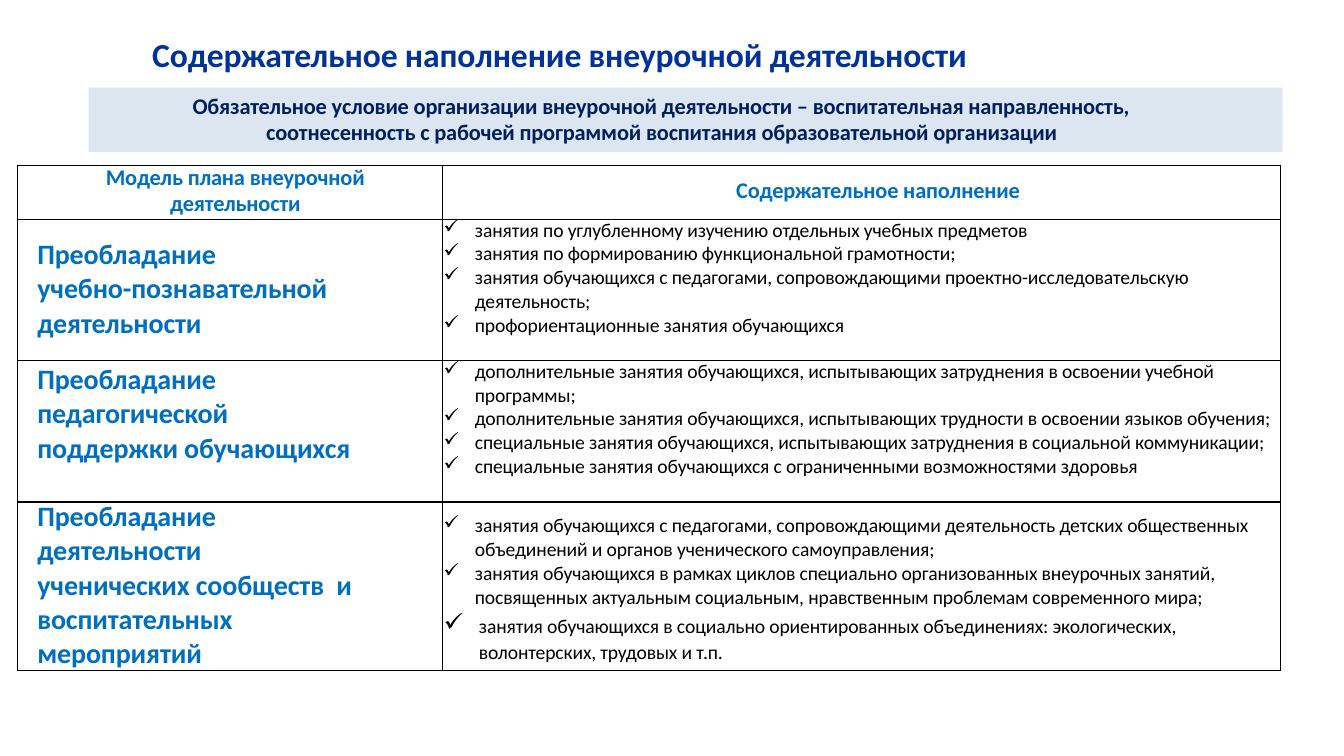
import pptx
import pptx.dml.color
import pptx.enum.shapes
import pptx.enum.text
import pptx.oxml
import pptx.oxml.ns
import pptx.util
import lxml.etree

RGBColor = pptx.dml.color.RGBColor
Pt = pptx.util.Pt
Align = pptx.enum.text.PP_ALIGN
qn = pptx.oxml.ns.qn

EMU_PER_PX = 9144
FONT = "Calibri"
TITLE_BLUE = RGBColor(0x00, 0x33, 0x99)
NAVY = RGBColor(0x00, 0x1F, 0x5F)
TABLE_BLUE = RGBColor(0x00, 0x6F, 0xC0)
PALE_BLUE = RGBColor(0xDC, 0xE6, 0xF1)
BLACK = RGBColor(0x00, 0x00, 0x00)

TITLE = "Содержательное наполнение внеурочной деятельности"
CONDITION = (
    "Обязательное условие организации внеурочной деятельности – воспитательная направленность, "
    "соотнесенность с рабочей программой воспитания образовательной организации"
)
HEADER_MODEL = ["Модель плана внеурочной", "деятельности"]
HEADER_CONTENT = ["Содержательное наполнение"]
MODELS = [
    ["Преобладание", "учебно-познавательной деятельности"],
    ["Преобладание", "педагогической", "поддержки обучающихся"],
    ["Преобладание", "деятельности", "ученических сообществ  и воспитательных мероприятий"],
]
CONTENTS = [
    [
        "занятия по углубленному изучению отдельных учебных предметов",
        "занятия по формированию функциональной грамотности;",
        "занятия обучающихся с педагогами, сопровождающими проектно-исследовательскую деятельность;",
        "профориентационные занятия обучающихся",
    ],
    [
        "дополнительные занятия обучающихся, испытывающих затруднения в освоении учебной",
        "программы;",
        "дополнительные занятия обучающихся, испытывающих трудности в освоении языков обучения;",
        "специальные занятия обучающихся, испытывающих затруднения в социальной коммуникации;",
        "специальные занятия обучающихся с ограниченными возможностями здоровья",
    ],
    [
        "занятия обучающихся с педагогами, сопровождающими деятельность детских общественных "
        "объединений и органов ученического самоуправления;",
        "занятия обучающихся в рамках циклов специально организованных внеурочных занятий,",
        "посвященных актуальным социальным, нравственным проблемам современного мира;",
        "занятия обучающихся в социально ориентированных объединениях: экологических, "
        "волонтерских, трудовых и т.п.",
    ],
]
CONTINUATIONS = ("программы;", "посвященных")
MODEL_TOPS = [18, 2, 0]
CONTENT_TOPS = [0, 0, 12]
MODEL_FIRST_LINES = [None, None, 22.9]
CONTENT_FIRST_LINES = [16.1, 16.1, None]
COLUMN_WIDTHS = [422, 831]
ROW_HEIGHTS = [54, 140, 140, 167]


def px(length):
    return pptx.util.Emu(length * EMU_PER_PX)


def set_indent(paragraph, left, first=0, right=0):
    properties = paragraph._p.get_or_add_pPr()
    for name, length in (("marL", left), ("marR", right), ("indent", first)):
        properties.set(name, str(px(length)))


def set_bullet(paragraph, percent=100):
    properties = paragraph._p.get_or_add_pPr()
    size = lxml.etree.SubElement(properties, qn("a:buSzPct"))
    size.set("val", str(percent * 1000))
    bullet = lxml.etree.SubElement(properties, qn("a:buChar"))
    bullet.set("char", "✓")


def format_runs(paragraph, size, color, bold=True):
    for run in paragraph.runs:
        run.font.name = FONT
        run.font.size = Pt(size)
        run.font.bold = bold
        run.font.color.rgb = color
        run._r.get_or_add_rPr().set("spc", "-10")


def set_margins(holder, top):
    holder.margin_left = holder.margin_right = holder.margin_bottom = 0
    holder.margin_top = px(top)


def write_cell(cell, lines, top, size, color, bold=True):
    set_margins(cell, top)
    cell.text_frame.text = "\n".join(lines)
    for paragraph in cell.text_frame.paragraphs:
        format_runs(paragraph, size, color, bold)
    return cell.text_frame.paragraphs


def set_borders(cell):
    cell.fill.background()
    properties = cell._tc.get_or_add_tcPr()
    for position, side in enumerate(("lnL", "lnR", "lnT", "lnB")):
        border = pptx.oxml.parse_xml(
            f'<a:{side} xmlns:a="http://schemas.openxmlformats.org/drawingml/2006/main" w="12700">'
            f'<a:solidFill><a:srgbClr val="{BLACK}"/></a:solidFill></a:{side}>'
        )
        properties.insert(position, border)


def add_title(slide, left, top, width, height):
    text_frame = slide.shapes.add_textbox(px(left), px(top), px(width), px(height)).text_frame
    text_frame.word_wrap = True
    set_margins(text_frame, 1)
    text_frame.text = TITLE
    paragraph = text_frame.paragraphs[0]
    paragraph.space_before = Pt(1)
    set_indent(paragraph, 1)
    format_runs(paragraph, 24, TITLE_BLUE)


def add_condition(slide, left, top, width, height):
    rectangle = pptx.enum.shapes.MSO_SHAPE.RECTANGLE
    shape = slide.shapes.add_shape(rectangle, px(left), px(top), px(width), px(height))
    shape.shadow.inherit = False
    shape.fill.solid()
    shape.fill.fore_color.rgb = PALE_BLUE
    shape.line.fill.background()
    text_frame = shape.text_frame
    text_frame.word_wrap = True
    text_frame.vertical_anchor = pptx.enum.text.MSO_ANCHOR.TOP
    set_margins(text_frame, 4)
    text_frame.text = CONDITION
    paragraph = text_frame.paragraphs[0]
    paragraph.alignment = Align.LEFT
    set_indent(paragraph, 176, -73, 100)
    format_runs(paragraph, 16, NAVY)


def fill_header(table):
    model = write_cell(table.cell(0, 0), HEADER_MODEL, 0, 16, TABLE_BLUE)
    content = write_cell(table.cell(0, 1), HEADER_CONTENT, 12, 16, TABLE_BLUE)
    for paragraph, spacing in zip(model, (18.4, 19.1)):
        paragraph.line_spacing = Pt(spacing)
    for paragraphs, indent in ((model, 11), (content, 33)):
        for paragraph in paragraphs:
            paragraph.alignment = Align.CENTER
            set_indent(paragraph, indent)


def fill_row(table, index):
    model = write_cell(table.cell(index + 1, 0), MODELS[index], MODEL_TOPS[index], 20, TABLE_BLUE)
    content = write_cell(
        table.cell(index + 1, 1), CONTENTS[index], CONTENT_TOPS[index], 14, BLACK, False
    )
    first_lines = (MODEL_FIRST_LINES[index], CONTENT_FIRST_LINES[index])
    for paragraphs, spacing in zip((model, content), first_lines):
        if spacing:
            paragraphs[0].line_spacing = Pt(spacing)
    for paragraph in model:
        set_indent(paragraph, 20, right=60)
    for paragraph in content:
        if paragraph.text.startswith(CONTINUATIONS):
            set_indent(paragraph, 32)
        elif paragraph.text.endswith("т.п."):
            set_indent(paragraph, 36, -35, 20)
            paragraph.line_spacing = 1.09
            paragraph.space_before = Pt(2)
            set_bullet(paragraph, 129)
        else:
            set_indent(paragraph, 32, -31)
            set_bullet(paragraph)


def add_plan_table(slide, left, top):
    frame = slide.shapes.add_table(
        len(ROW_HEIGHTS), len(COLUMN_WIDTHS),
        px(left), px(top), px(sum(COLUMN_WIDTHS)), px(sum(ROW_HEIGHTS)),
    )
    table = frame.table
    table.first_row = table.horz_banding = False
    for column, width in zip(table.columns, COLUMN_WIDTHS):
        column.width = px(width)
    for row, height in zip(table.rows, ROW_HEIGHTS):
        row.height = px(height)
    for cell in table.iter_cells():
        set_borders(cell)
    fill_header(table)
    for index in range(len(MODELS)):
        fill_row(table, index)


def main():
    presentation = pptx.Presentation()
    presentation.slide_width = px(1333)
    presentation.slide_height = px(750)
    slide = presentation.slides.add_slide(presentation.slide_layouts[6])
    add_title(slide, 150, 33, 1109, 43)
    add_condition(slide, 88, 87, 1184, 64)
    add_plan_table(slide, 17, 164)
    presentation.save("out.pptx")


if __name__ == "__main__":
    main()
